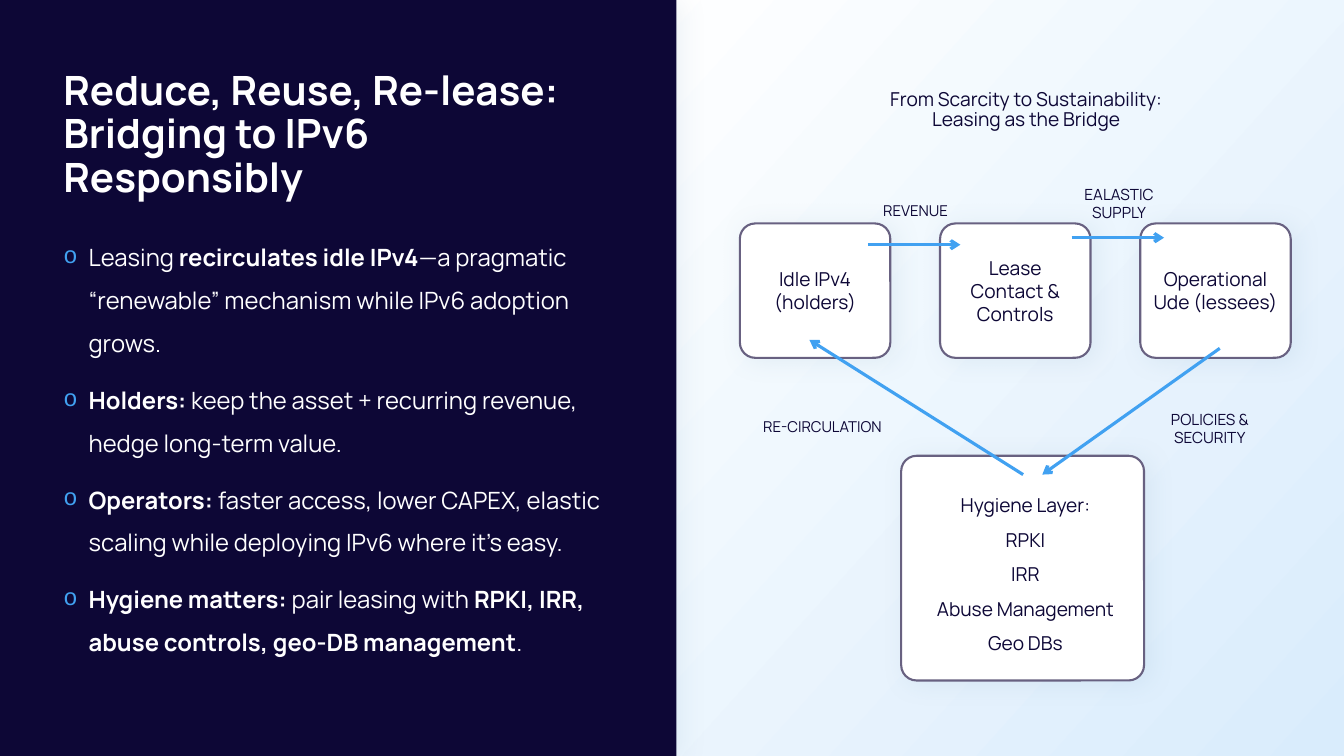
import pptx
import pptx.util
import pptx.dml.color
import pptx.enum.shapes
import pptx.enum.text
import pptx.oxml
import pptx.oxml.ns
from lxml import etree

Pt = pptx.util.Pt
SHAPE = pptx.enum.shapes.MSO_SHAPE
ALIGN = pptx.enum.text.PP_ALIGN
ANCHOR = pptx.enum.text.MSO_ANCHOR
qn = pptx.oxml.ns.qn
FONT = "Manrope"
COLORS = {"navy": "0D0736", "white": "FFFFFF", "sky": "41A1F1",
          "border": "686181", "shadow": "789FBA", "mist": "D9ECFC"}
RGB = {name: pptx.dml.color.RGBColor.from_string(value) for name, value in COLORS.items()}


def write(shape, text, size, color="navy", align=ALIGN.CENTER, spacing=1.0, bold=False):
    """Fill a shape with evenly formatted, wrapped, vertically centred text."""
    frame = shape.text_frame
    frame.word_wrap = True
    frame.vertical_anchor = ANCHOR.MIDDLE
    frame.text = text
    for para in frame.paragraphs:
        para.alignment = align
        para.line_spacing = spacing
        for span in para.runs:
            span.font.name = FONT
            span.font.size = Pt(size)
            span.font.bold = bold
            span.font.color.rgb = RGB[color]


def add_panel(kind, left, top, width, height, fill):
    """Add a filled shape with a soft drop shadow."""
    panel = page.shapes.add_shape(kind, Pt(left), Pt(top), Pt(width), Pt(height))
    panel.fill.solid()
    panel.fill.fore_color.rgb = RGB[fill]
    panel.line.fill.background()
    panel.shadow.inherit = False
    effects = panel._element.spPr.find(qn("a:effectLst"))
    shadow = etree.SubElement(effects, qn("a:outerShdw"), blurRad=str(Pt(17.7)),
                              dist=str(Pt(4)), dir=str(26 * 60000), algn="ctr", rotWithShape="0")
    tint = etree.SubElement(shadow, qn("a:srgbClr"), val=COLORS["shadow"])
    etree.SubElement(tint, qn("a:alpha"), val="13000")
    return panel


deck = pptx.Presentation()
deck.slide_width, deck.slide_height = Pt(960), Pt(540)
page = deck.slides.add_slide(deck.slide_layouts[6])

# Background: white fading to pale blue at the lower right
backdrop = page.background.fill
backdrop.gradient()
backdrop.gradient_angle = 360 - 42
for stop, position, name in zip(backdrop.gradient_stops, (0.31, 1), ("white", "mist")):
    stop.position = position
    stop.color.rgb = RGB[name]

# Left panel and title
add_panel(SHAPE.RECTANGLE, -3.6, 0, 486.7, 540, "navy")
title = page.shapes.add_textbox(Pt(38.2), Pt(44.6), Pt(406), Pt(104.4))
write(title, "Reduce, Reuse, Re-lease: Bridging to IPv6 Responsibly", 28.8,
      "white", ALIGN.LEFT, 0.9, True)

# Bullet list: each point is a list of (text, bold) spans
points = [
    [("Leasing ", False), ("recirculates idle IPv4", True),
     ("—a pragmatic “renewable” mechanism while IPv6 adoption grows.", False)],
    [("Holders:", True), (" keep the asset + recurring revenue, hedge long-term value.", False)],
    [("Operators:", True),
     (" faster access, lower CAPEX, elastic scaling while deploying IPv6 where it’s easy.", False)],
    [("Hygiene matters:", True), (" pair leasing with ", False),
     ("RPKI, IRR, abuse controls, geo-DB management", True), (".", False)],
]
body = page.shapes.add_textbox(Pt(38.2), Pt(159.8), Pt(406), Pt(342.7))
frame = body.text_frame
frame.word_wrap = True
for index, point in enumerate(points):
    para = frame.add_paragraph() if index else frame.paragraphs[0]
    para.line_spacing = 1.5
    para.space_before = Pt(10 if index else 0)
    props = para._p.get_or_add_pPr()
    props.set("marL", str(Pt(18)))
    props.set("indent", str(-Pt(18)))
    bullet_color = etree.SubElement(props, qn("a:buClr"))
    etree.SubElement(bullet_color, qn("a:srgbClr"), val=COLORS["sky"])
    etree.SubElement(props, qn("a:buFont"), typeface="Courier New")
    etree.SubElement(props, qn("a:buChar"), char="o")
    for text, bold in point:
        span = para.add_run()
        span.text = text
        span.font.name = FONT
        span.font.size = Pt(17)
        span.font.bold = bold
        span.font.color.rgb = RGB["white"]

# Diagram heading
heading = page.shapes.add_textbox(Pt(563.8), Pt(54), Pt(338.4), Pt(49.7))
write(heading, "From Scarcity to Sustainability:\nLeasing as the Bridge", 13.7, spacing=0.9)

# Cards: three in a row, and the hygiene layer below
ROW_LEFT, ROW_STEP, ROW_TOP, CARD_WIDTH, CARD_HEIGHT = 528.5, 143, 159.6, 107.5, 96
stages = ["Idle IPv4\n(holders)", "Lease Contact & Controls", "Operational Ude (lessees)"]
cards = [(ROW_LEFT + ROW_STEP * index, ROW_TOP, CARD_WIDTH, CARD_HEIGHT, text, 1.0, 5)
         for index, text in enumerate(stages)]
cards.append((643.7, 325.6, 173.5, 160.5,
              "Hygiene Layer:\nRPKI\nIRR\nAbuse Management\nGeo DBs", 1.5, 9))
for left, top, width, height, text, spacing, inset in cards:
    card = add_panel(SHAPE.ROUNDED_RECTANGLE, left, top, width, height, "white")
    card.adjustments[0] = 11 / min(width, height)
    card.line.color.rgb = RGB["border"]
    card.line.width = Pt(1.5)
    card.text_frame.margin_left = Pt(inset)
    card.text_frame.margin_right = Pt(5)
    write(card, text, 13.7, spacing=spacing)

# Arrows: start and end points
arrows = [((620, 174.8), (686, 174.8)), ((765.5, 169.8), (831.5, 169.8)),
          ((871.3, 248.8), (744.5, 339)), ((730.8, 339), (578.2, 242.8))]
for start, end in arrows:
    arrow = page.shapes.add_connector(pptx.enum.shapes.MSO_CONNECTOR.STRAIGHT,
                                      *(Pt(value) for value in start + end))
    arrow.line.color.rgb = RGB["sky"]
    arrow.line.width = Pt(2.25)
    etree.SubElement(arrow.line._get_or_add_ln(), qn("a:tailEnd"), type="arrow")
    etree.SubElement(arrow._element.spPr, qn("a:effectLst"))

# Arrow labels: left, top, width, text, size
labels = [(612, 133.9, 84, "REVENUE", 10.7), (757.4, 128.9, 84, "EALASTIC SUPPLY", 11),
          (822.2, 289.5, 84, "POLICIES & SECURITY", 11),
          (522, 288, 131, "RE-CIRCULATION", 10.7)]
for left, top, width, text, size in labels:
    label = page.shapes.add_textbox(Pt(left), Pt(top), Pt(width), Pt(33))
    write(label, text, size)

deck.save("out.pptx")
